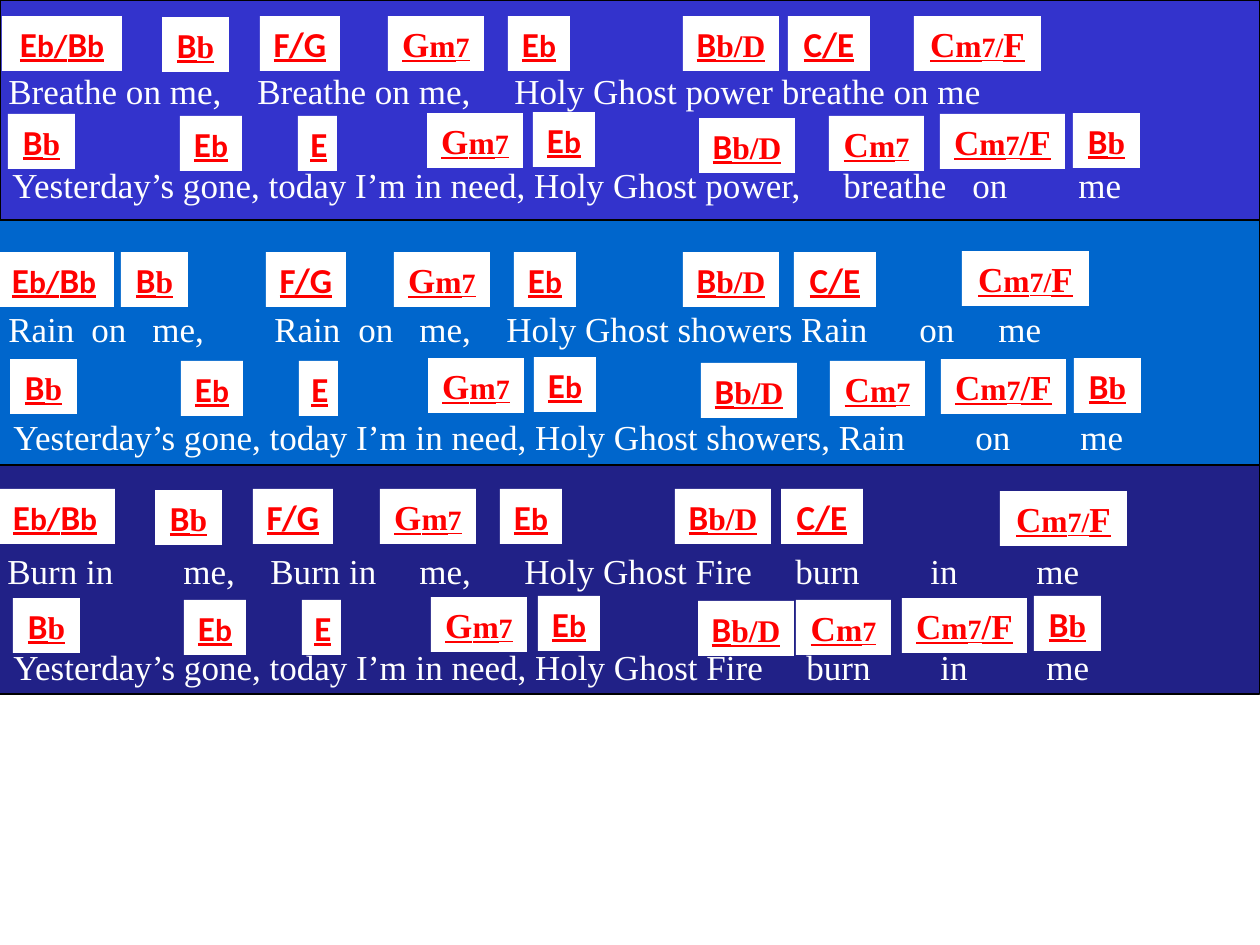
from lxml import etree
from pptx import Presentation
from pptx.dml.color import RGBColor
from pptx.enum.shapes import MSO_SHAPE as SHAPE
from pptx.enum.text import MSO_ANCHOR, MSO_AUTO_SIZE, PP_ALIGN
from pptx.oxml.ns import qn
from pptx.util import Pt

PX = 914400 // 126
INSET = 13
BOX_H = 55
SERIF, SANS = "Times New Roman", "Calibri"

WHITE = RGBColor(0xFF, 0xFF, 0xFF)
BLACK = RGBColor(0x00, 0x00, 0x00)
RED = RGBColor(0xFF, 0x00, 0x00)
INDIGO = RGBColor(0x33, 0x33, 0xCC)
BLUE = RGBColor(0x00, 0x66, 0xCC)
NAVY = RGBColor(0x21, 0x21, 0x87)

# Verse bands: left, top, width, height, colour
BANDS = [
    (-4, 465, 1264, 229, NAVY),
    (-4, 220, 1264, 245, BLUE),
    (0, 0, 1260, 220, INDIGO),
]

# Lyric lines: top, box width, then each phrase with the x where it starts
LYRICS = [
    (63, 1260, [(9, "Breathe on me,"), (258, "Breathe on me,"),
                (515, "Holy Ghost power breathe on me")]),
    (157, 1207, [(13, "Yesterday’s gone, today I’m in need, Holy Ghost power,"),
                 (844, "breathe"), (973, "on"), (1079, "me")]),
    (301, 1260, [(9, "Rain"), (92, "on"), (153, "me,"), (275, "Rain"),
                 (359, "on"), (420, "me,"), (507, "Holy Ghost showers Rain"),
                 (920, "on"), (999, "me")]),
    (409, 1207, [(14, "Yesterday’s gone, today I’m in need, Holy Ghost showers, Rain"),
                 (976, "on"), (1081, "me")]),
    (543, 1260, [(8, "Burn in"), (184, "me,"), (271, "Burn in"), (420, "me,"),
                 (525, "Holy Ghost Fire"), (796, "burn"), (931, "in"), (1037, "me")]),
    (639, 1207, [(14, "Yesterday’s gone, today I’m in need, Holy Ghost Fire"),
                 (807, "burn"), (941, "in"), (1047, "me")]),
]

# Chord labels: box width and runs of (text, size, font)
CHORDS = {
    "Eb/Bb": (120, [("E", 20, SANS), ("b/", 18, SANS), ("B", 20, SANS), ("b", 18, SANS)]),
    "Bb": (67, [("B", 20, SANS), ("b", 18, SERIF)]),
    "Eb": (62, [("E", 20, SANS), ("b", 18, SANS)]),
    "E": (39, [("E", 20, SANS)]),
    "F/G": (80, [("F/G", 20, SANS)]),
    "C/E": (82, [("C/E", 20, SANS)]),
    "Bb/D": (96, [("B", 20, SANS), ("b/D", 18, SERIF)]),
    "Gm7": (96, [("G", 20, SERIF), ("m", 18, SERIF), ("7", 16, SERIF)]),
    "Cm7": (95, [("C", 20, SERIF), ("m", 18, SERIF), ("7", 16, SERIF)]),
    "Cm7/F": (125, [("C", 20, SERIF), ("m", 18, SERIF), ("7", 16, SERIF),
                    ("/F", 20, SERIF)]),
    "Cm7/F end": (127, [("C", 20, SERIF), ("m", 18, SERIF), ("7/", 16, SERIF),
                        ("F", 20, SERIF)]),
}

# The order of chords above the first and second line of every verse
UPPER = ["Eb/Bb", "Bb", "F/G", "Gm7", "Eb", "Bb/D", "C/E", "Cm7/F end"]
LOWER = ["Bb", "Eb", "E", "Gm7", "Eb", "Bb/D", "Cm7", "Cm7/F", "Bb"]

# Chord rows: chords, (left, top) of each
CHORD_ROWS = [
    (UPPER, [(2, 16), (162, 17), (260, 16), (388, 16), (508, 16),
             (683, 16), (788, 16), (914, 16)]),
    (LOWER, [(8, 114), (180, 116), (298, 116), (427, 113), (533, 112),
             (699, 118), (829, 116), (940, 114), (1073, 113)]),
    (UPPER, [(-6, 252), (121, 252), (266, 252), (394, 252), (514, 252),
             (683, 252), (794, 252), (962, 251)]),
    (LOWER, [(10, 359), (181, 361), (299, 361), (428, 358), (534, 357),
             (701, 363), (830, 361), (941, 359), (1074, 358)]),
    (UPPER, [(-5, 489), (155, 490), (253, 489), (380, 489), (500, 489),
             (675, 489), (781, 489), (1000, 491)]),
    (LOWER, [(13, 598), (184, 600), (302, 600), (431, 597), (538, 596),
             (698, 601), (796, 600), (902, 598), (1034, 596)]),
]


def emu(*lengths):
    return [n * PX for n in lengths]


def add_rect(slide, box, fill, line=None):
    s = slide.shapes.add_shape(SHAPE.RECTANGLE, *emu(*box))
    s.shadow.inherit = False
    s.fill.solid()
    s.fill.fore_color.rgb = fill
    if line is None:
        s.line.fill.background()
    else:
        s.line.color.rgb = line
        s.line.width = Pt(0.75)
    return s


def set_frame(tf):
    frame = {"word_wrap": True, "auto_size": MSO_AUTO_SIZE.SHAPE_TO_FIT_TEXT,
             "vertical_anchor": MSO_ANCHOR.TOP}
    for name, value in frame.items():
        setattr(tf, name, value)


def add_run(p, text, size, font, color, **style):
    r = p.add_run()
    r.text = text
    r.font.color.rgb = color
    for name, value in {"size": Pt(size), "name": font, **style}.items():
        setattr(r.font, name, value)


def add_lyric(slide, top, width, phrases):
    start = phrases[0][0]
    s = slide.shapes.add_textbox(*emu(start - INSET, top, width, BOX_H))
    set_frame(s.text_frame)
    p = s.text_frame.paragraphs[0]
    # One tab stop for each phrase after the first
    tabs = etree.SubElement(p._p.get_or_add_pPr(), qn("a:tabLst"))
    for x, _ in phrases[1:]:
        etree.SubElement(tabs, qn("a:tab"), pos=str((x - start) * PX), algn="l")
    add_run(p, "\t".join(text for _, text in phrases), 20, SERIF, WHITE)


def add_chord(slide, chord, left, top):
    width, runs = CHORDS[chord]
    s = add_rect(slide, (left, top, width, BOX_H), WHITE)
    set_frame(s.text_frame)
    p = s.text_frame.paragraphs[0]
    p.alignment = PP_ALIGN.CENTER
    for text, size, font in runs:
        add_run(p, text, size, font, RED, bold=True, underline=True)


def main():
    prs = Presentation()
    prs.slide_width, prs.slide_height = emu(1260, 945)
    slide = prs.slides.add_slide(prs.slide_layouts[6])
    for *box, color in BANDS:
        add_rect(slide, box, color, BLACK)
    for lyric in LYRICS:
        add_lyric(slide, *lyric)
    for chords, places in CHORD_ROWS:
        for chord, (left, top) in zip(chords, places):
            add_chord(slide, chord, left, top)
    prs.save("out.pptx")


if __name__ == "__main__":
    main()
